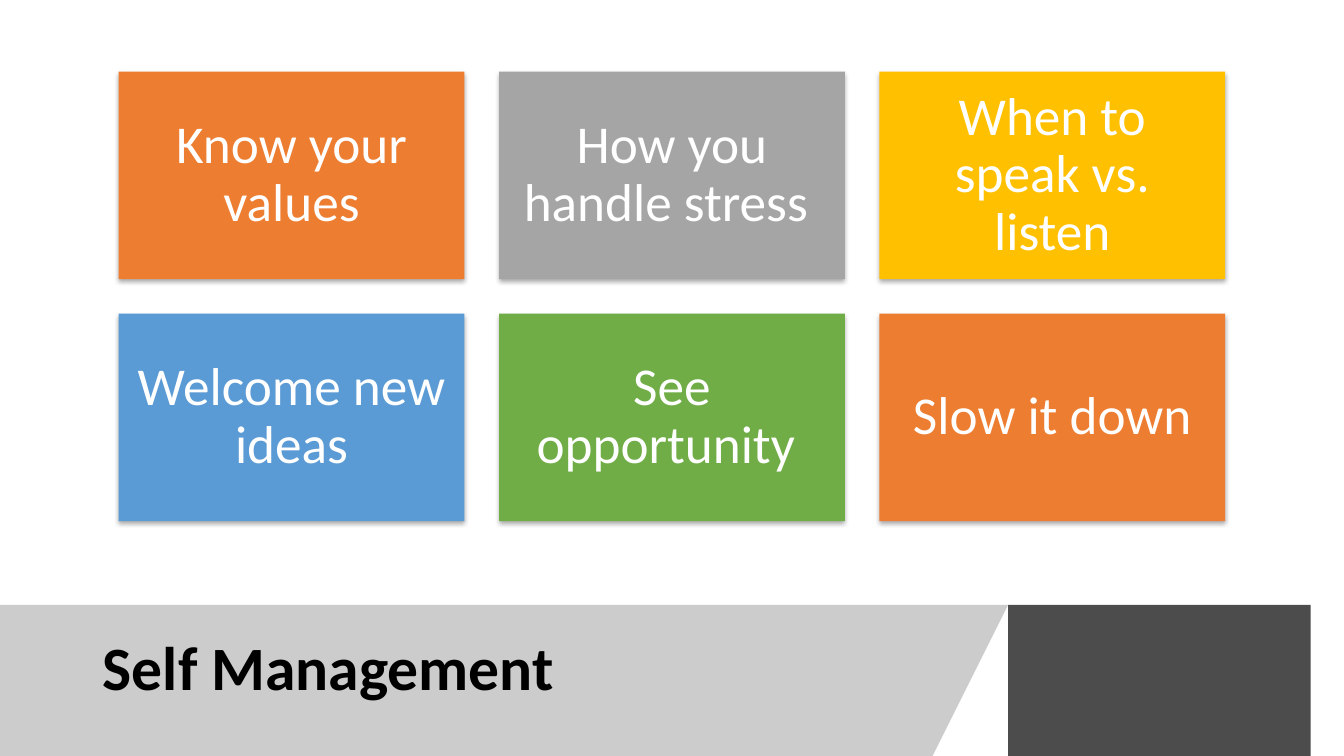
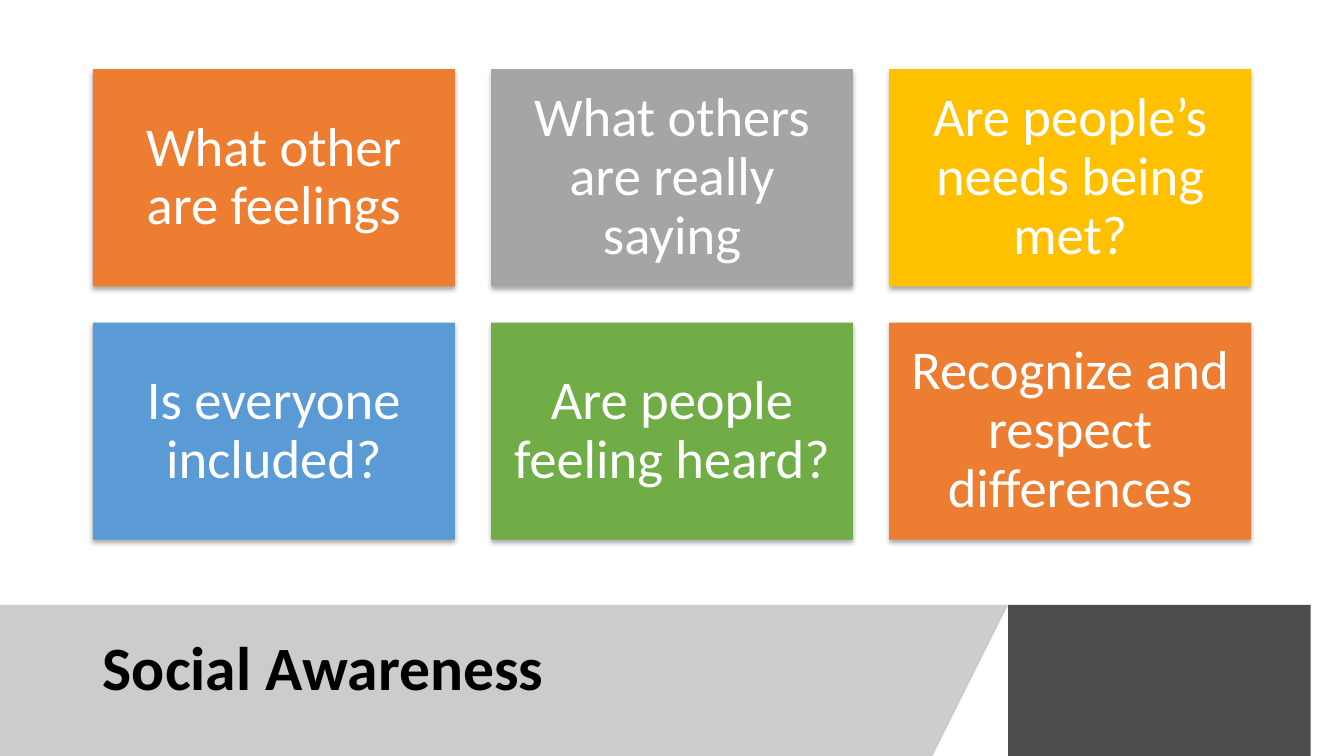
import lxml.etree
import pptx
import pptx.dml.color
import pptx.enum.shapes
import pptx.enum.text
import pptx.oxml
import pptx.oxml.ns
import pptx.util

BLACK = pptx.dml.color.RGBColor(0x00, 0x00, 0x00)
WHITE = pptx.dml.color.RGBColor(0xFF, 0xFF, 0xFF)
GRAY = pptx.dml.color.RGBColor(0x80, 0x80, 0x80)
ORANGE = pptx.dml.color.RGBColor(0xED, 0x7D, 0x31)
SILVER = pptx.dml.color.RGBColor(0xA5, 0xA5, 0xA5)
GOLD = pptx.dml.color.RGBColor(0xFF, 0xC0, 0x00)
BLUE = pptx.dml.color.RGBColor(0x5B, 0x9B, 0xD5)
GREEN = pptx.dml.color.RGBColor(0x70, 0xAD, 0x47)
TILE_COLORS = [ORANGE, SILVER, GOLD, BLUE, GREEN, ORANGE]

WIDTH, HEIGHT = 13.33, 7.5
BAND_TOP = 5.87
COLUMNS, ROWS = 3, 2
GAP_SHARE, HEIGHT_SHARE = 0.1, 0.6
FONT = "Calibri"
INSET = pptx.util.Inches(0.16)

TITLE_FONT = {"name": FONT, "size": pptx.util.Pt(44), "bold": True}
TITLE_BOX = {
    "left": pptx.util.Inches(0.92),
    "top": pptx.util.Inches(6.05),
    "width": pptx.util.Inches(8.44),
    "height": pptx.util.Inches(1.2),
}
FRAME = {
    "word_wrap": True,
    "auto_size": pptx.enum.text.MSO_AUTO_SIZE.NONE,
    "vertical_anchor": pptx.enum.text.MSO_ANCHOR.MIDDLE,
}
TILE_FRAME = FRAME | {
    "margin_left": INSET,
    "margin_top": INSET,
    "margin_right": INSET,
    "margin_bottom": INSET,
}
BANDS = [
    ([(0, BAND_TOP), (10.02, BAND_TOP), (9.26, HEIGHT), (0, HEIGHT)], GRAY, 40),
    ([(10.34, BAND_TOP), (WIDTH, BAND_TOP), (WIDTH, HEIGHT), (9.58, HEIGHT)], BLACK, 70),
]
TILE_SHADOW = (
    f'<a:effectLst {pptx.oxml.ns.nsdecls("a")}>'
    '<a:outerShdw blurRad="44450" dist="27940" dir="5400000" algn="ctr">'
    '<a:srgbClr val="000000"><a:alpha val="32000"/></a:srgbClr>'
    "</a:outerShdw></a:effectLst>"
)
SLIDES = [
    {
        "title": "Self Management",
        "tile_width": 3.43,
        "grid_middle": 2.94,
        "size": 38,
        "tiles": [
            "Know your values",
            "How you handle stress ",
            "When to speak vs. listen",
            "Welcome new ideas",
            "See opportunity ",
            "Slow it down",
        ],
    },
    {
        "title": "Social Awareness",
        "tile_width": 3.59,
        "grid_middle": 3.02,
        "size": 39,
        "tiles": [
            "What other are feelings",
            "What others are really saying",
            "Are people’s needs being met?",
            "Is everyone included?",
            "Are people feeling heard?",
            "Recognize and respect differences",
        ],
    },
]


def set_attributes(target, values):
    for name, value in values.items():
        setattr(target, name, value)


def write_text(shape, text, frame_values, font_values, color, alignment):
    frame = shape.text_frame
    set_attributes(frame, frame_values)
    frame.text = text
    paragraph = frame.paragraphs[0]
    paragraph.alignment = alignment
    paragraph.line_spacing = 0.9
    set_attributes(paragraph.font, font_values)
    paragraph.font.color.rgb = color


presentation = pptx.Presentation()
presentation.slide_width = pptx.util.Inches(WIDTH)
presentation.slide_height = pptx.util.Inches(HEIGHT)
title_only = presentation.slide_layouts.get_by_name("Title Only")

for content in SLIDES:
    slide = presentation.slides.add_slide(title_only)
    title = slide.shapes.title
    set_attributes(title, TITLE_BOX)
    write_text(title, content["title"], FRAME, TITLE_FONT, BLACK, pptx.enum.text.PP_ALIGN.LEFT)

    bands = []
    for points, color, opacity in BANDS:
        builder = slide.shapes.build_freeform(*points[0], scale=pptx.util.Inches(1))
        builder.add_line_segments(points[1:], close=True)
        band = builder.convert_to_shape()
        band.shadow.inherit = False
        band.line.fill.background()
        band.fill.solid()
        band.fill.fore_color.rgb = color
        color_element = band.element.spPr.find(".//" + pptx.oxml.ns.qn("a:srgbClr"))
        alpha = lxml.etree.SubElement(color_element, pptx.oxml.ns.qn("a:alpha"))
        alpha.set("val", str(opacity * 1000))
        bands.append(band)
    title.element.addprevious(bands[0].element)

    tile_width = content["tile_width"]
    tile_height = tile_width * HEIGHT_SHARE
    gap = tile_width * GAP_SHARE
    grid_left = (WIDTH - COLUMNS * tile_width - (COLUMNS - 1) * gap) / 2
    grid_top = content["grid_middle"] - (ROWS * tile_height + (ROWS - 1) * gap) / 2
    tile_font = {"name": FONT, "size": pptx.util.Pt(content["size"])}

    for index, (text, color) in enumerate(zip(content["tiles"], TILE_COLORS)):
        row, column = divmod(index, COLUMNS)
        tile = slide.shapes.add_shape(
            pptx.enum.shapes.MSO_SHAPE.RECTANGLE,
            pptx.util.Inches(grid_left + column * (tile_width + gap)),
            pptx.util.Inches(grid_top + row * (tile_height + gap)),
            pptx.util.Inches(tile_width),
            pptx.util.Inches(tile_height),
        )
        tile.fill.solid()
        tile.fill.fore_color.rgb = color
        tile.line.fill.background()
        tile.element.spPr.append(pptx.oxml.parse_xml(TILE_SHADOW))
        write_text(tile, text, TILE_FRAME, tile_font, WHITE, pptx.enum.text.PP_ALIGN.CENTER)

presentation.save("out.pptx")
